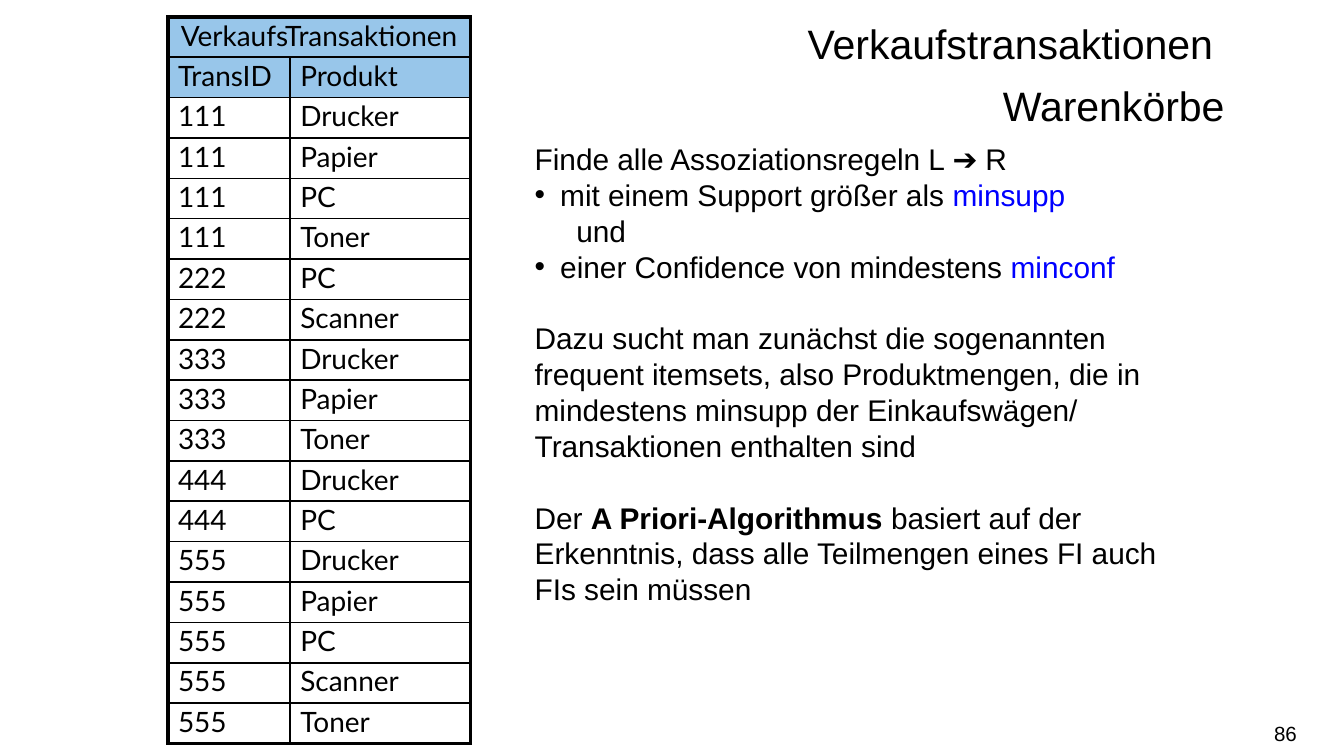
from lxml import etree
from pptx import Presentation
from pptx.dml.color import RGBColor
from pptx.enum.text import MSO_ANCHOR, PP_ALIGN
from pptx.oxml.ns import qn
from pptx.util import Inches, Pt

LEFT, RIGHT, CENTER = PP_ALIGN.LEFT, PP_ALIGN.RIGHT, PP_ALIGN.CENTER
TOP, MIDDLE = MSO_ANCHOR.TOP, MSO_ANCHOR.MIDDLE

UNIT = Inches(0.1)
SLIDE_COLUMNS = 100
SLIDE_ROWS = SLIDE_COLUMNS * 9 / 16
COLORS = {"ink": "000000", "term": "0000FF", "header": "98C6EA"}
BLANK_LINE = Pt(19.2)
OUTER, INNER = Pt(2.25), Pt(1)

BASKETS = {
    "111": ["Drucker", "Papier", "PC", "Toner"],
    "222": ["PC", "Scanner"],
    "333": ["Drucker", "Papier", "Toner"],
    "444": ["Drucker", "PC"],
    "555": ["Drucker", "Papier", "PC", "Scanner", "Toner"],
}
HEADERS = [("VerkaufsTransaktionen", ""), ("TransID", "Produkt")]
BULLET = {"margin": 0.19, "indent": -0.19, "bullet": "•"}
EXPLANATION = [
    ([("Finde alle Assoziationsregeln L ➔ R", {})], {}),
    ([("mit einem Support größer als ", {}), ("minsupp", {"color": "term"})], BULLET),
    ([("und", {})], {"margin": 0.31}),
    ([("einer Confidence von mindestens ", {}), ("minconf", {"color": "term"})], BULLET),
    ([("Dazu sucht man zunächst die sogenannten frequent itemsets, also "
       "Produktmengen, die in mindestens minsupp der Einkaufswägen/ "
       "Transaktionen enthalten sind", {})], {"space_before": BLANK_LINE}),
    ([("Der ", {}), ("A Priori-Algorithmus ", {"bold": True}),
      ("basiert auf der Erkenntnis, dass alle Teilmengen eines FI auch FIs "
       "sein müssen", {})], {"space_before": BLANK_LINE}),
]


def grid(*cells):
    """Turn grid counts into lengths."""
    return [int(count * UNIT) for count in cells]


def apply(target, values):
    """Set every attribute named in a dict of format values."""
    for name, value in values.items():
        setattr(target, name, value)


def add_run(paragraph, text, size, font="Arial", color="ink", bold=False):
    """Append one formatted run to a paragraph."""
    run = paragraph.add_run()
    run.text = text
    apply(run.font, {"name": font, "size": Pt(size), "bold": bold})
    run.font.color.rgb = RGBColor.from_string(COLORS[color])


def indent_paragraph(paragraph, margin, indent=0, bullet=None):
    """Indent a paragraph and give it a bullet if one is named."""
    properties = paragraph._p.get_or_add_pPr()
    properties.set("marL", str(Inches(margin)))
    properties.set("indent", str(Inches(indent)))
    if bullet:
        etree.SubElement(properties, qn("a:buFont")).set("typeface", "Arial")
        etree.SubElement(properties, qn("a:buChar")).set("char", bullet)


def add_text_frame(slide, place, anchor=TOP, side_inset=0.1):
    """Add a wrapping text box and return its frame."""
    frame = slide.shapes.add_textbox(*grid(*place)).text_frame
    apply(frame, {"word_wrap": True, "vertical_anchor": anchor,
                  "margin_left": Inches(side_inset),
                  "margin_right": Inches(side_inset)})
    return frame


def add_title(slide):
    """Add the two-line title, aligned right."""
    title = add_text_frame(slide, (0, 0, 92.1, 9.4)).paragraphs[0]
    apply(title, {"alignment": RIGHT, "line_spacing": 1.25})
    add_run(title, "Verkaufstransaktionen ", 22)
    title.add_line_break()
    add_run(title, "Warenkörbe", 22)


def add_explanation(slide):
    """Add the explanation of association rules."""
    frame = add_text_frame(slide, (38.8, 10, 48.8, 46.2))
    for index, (runs, layout) in enumerate(EXPLANATION):
        paragraph = frame.add_paragraph() if index else frame.paragraphs[0]
        if "margin" in layout:
            indent_paragraph(paragraph, **layout)
        apply(paragraph, {"alignment": LEFT,
                          "space_before": layout.get("space_before", Pt(0))})
        for text, style in runs:
            add_run(paragraph, text, 16, **style)


def add_borders(cell, widths):
    """Draw the left, right, top and bottom borders of a cell."""
    properties = cell._tc.get_or_add_tcPr()
    for side, width in zip("LRTB", widths):
        line = etree.SubElement(properties, qn(f"a:ln{side}"), w=str(width))
        fill = etree.SubElement(line, qn("a:solidFill"))
        etree.SubElement(fill, qn("a:srgbClr")).set("val", COLORS["ink"])


def fill_cell(cell, text, alignment, is_header):
    """Format a cell and write its text."""
    apply(cell, {"margin_left": Pt(5.4), "margin_right": Pt(5.4),
                 "margin_top": Pt(2.7), "margin_bottom": Pt(2.7)})
    if is_header:
        cell.fill.solid()
        cell.fill.fore_color.rgb = RGBColor.from_string(COLORS["header"])
    else:
        cell.fill.background()
    paragraph = cell.text_frame.paragraphs[0]
    apply(paragraph, {"alignment": alignment, "line_spacing": 0.9})
    if text:
        add_run(paragraph, text, 15, "Lato")


def add_transactions(slide):
    """Add the table of sales transactions."""
    sales = [(basket, product) for basket, products in BASKETS.items()
             for product in products]
    rows = HEADERS + sales
    last = len(rows) - 1
    table = slide.shapes.add_table(
        len(rows), 2, *grid(12.5, 1.25, 22.5, 3 * len(rows))).table
    for column, width in zip(table.columns, grid(9.1, 13.4)):
        column.width = width
    for row_index, row in enumerate(rows):
        for column_index, text in enumerate(row):
            cell = table.cell(row_index, column_index)
            edges = (column_index == 0, column_index == 1 or row_index == 0,
                     row_index == 0, row_index == last)
            add_borders(cell, [OUTER if edge else INNER for edge in edges])
            fill_cell(cell, text, LEFT if row_index else CENTER,
                      row_index < len(HEADERS))
    table.cell(0, 0).merge(table.cell(0, 1))


def add_page_number(slide):
    """Add the page number at the lower right."""
    frame = add_text_frame(slide, (74.1, 53.1, 22.4, 3), MIDDLE, 0)
    frame.paragraphs[0].alignment = RIGHT
    add_run(frame.paragraphs[0], "86", 11)


def main():
    """Build and save the slide."""
    presentation = Presentation()
    width, height = grid(SLIDE_COLUMNS, SLIDE_ROWS)
    apply(presentation, {"slide_width": width, "slide_height": height})
    slide = presentation.slides.add_slide(presentation.slide_layouts[6])
    add_title(slide)
    add_explanation(slide)
    add_transactions(slide)
    add_page_number(slide)
    presentation.save("out.pptx")


if __name__ == "__main__":
    main()
